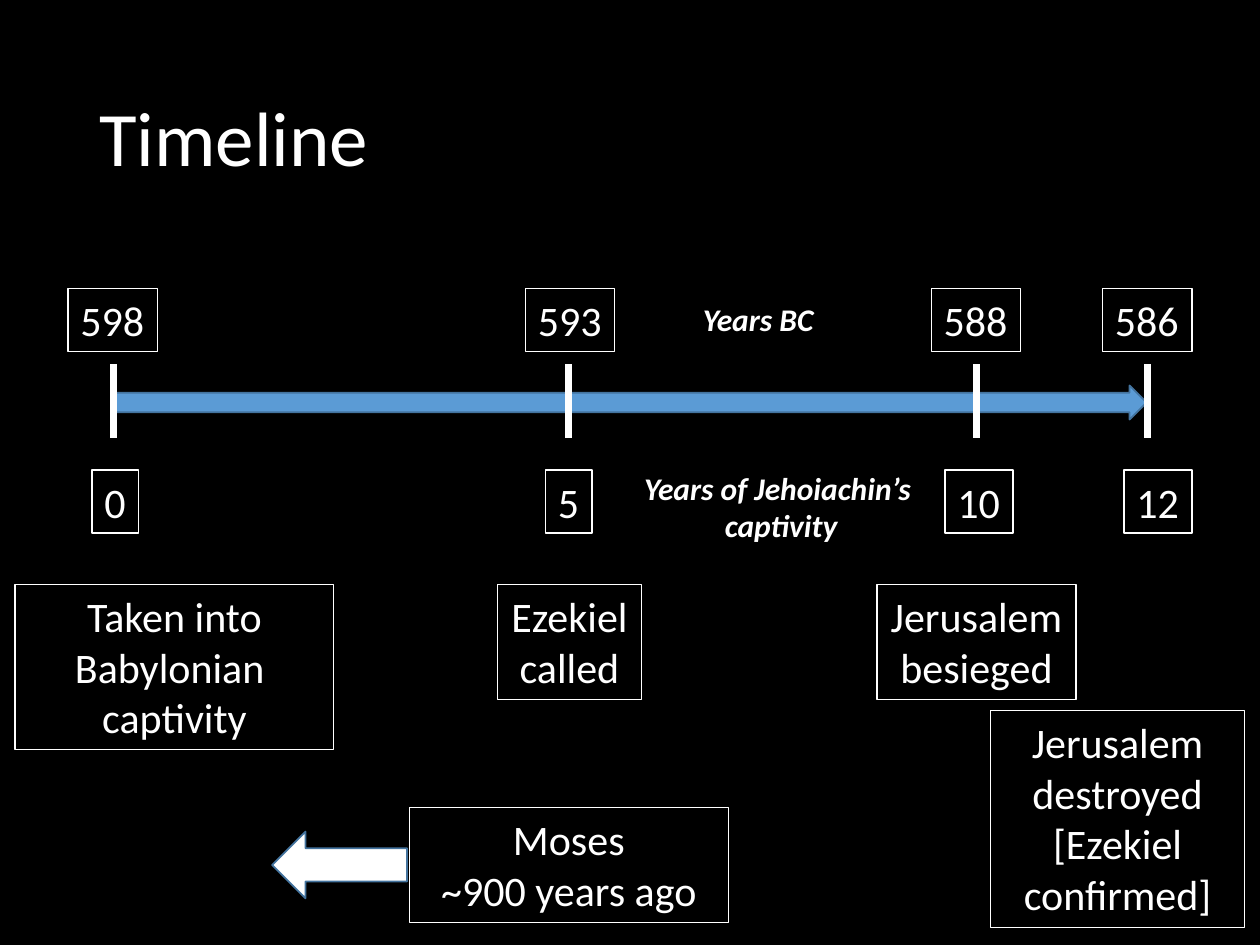
from pptx import Presentation
from pptx.dml.color import RGBColor
from pptx.enum.shapes import MSO_CONNECTOR, MSO_SHAPE
from pptx.enum.text import MSO_ANCHOR, MSO_AUTO_SIZE, PP_ALIGN
from pptx.oxml.ns import qn
from pptx.util import Inches, Pt

LEFT, CENTER = PP_ALIGN.LEFT, PP_ALIGN.CENTER
MIDDLE, TOP = MSO_ANCHOR.MIDDLE, MSO_ANCHOR.TOP
FIT = MSO_AUTO_SIZE.SHAPE_TO_FIT_TEXT
STRAIGHT = MSO_CONNECTOR.STRAIGHT
RIGHT_ARROW, LEFT_ARROW = MSO_SHAPE.RIGHT_ARROW, MSO_SHAPE.LEFT_ARROW

COLORS = {"back": "000000", "ink": "FFFFFF", "axis": "5B9BD5", "edge": "43739E"}
FONT = "Calibri"
COLS, ROWS = 100, 75
CELL = Inches(10) // COLS

YEAR_ROW, CAPTIVITY_ROW, EVENT_ROW = 22.9, 37.3, 46.4
TICK_TOP, TICK_BOTTOM = 28.9, 34.8
TICKS = [9, 45.1, 77.5, 91.1]
YEARS = [("598", 5.4), ("593", 41.7), ("588", 73.9), ("586", 87.5)]
CAPTIVITY = [("0", 7.3, 3.7), ("5", 43.3, 3.7), ("10", 75, 5.4), ("12", 89.2, 5.4)]
EVENTS = [
    ("Taken into Babylonian \ncaptivity", 1.2, EVENT_ROW, 25.3, 13.1, True),
    ("Ezekiel\ncalled", 39.5, EVENT_ROW, 11.4, 9.1, False),
    ("Jerusalem\nbesieged", 69.6, EVENT_ROW, 15.8, 9.1, False),
    ("Jerusalem\ndestroyed\n[Ezekiel confirmed]", 78.6, 56.4, 20.2, 17.2, True),
    ("Moses\n~900 years ago", 32.5, 64.1, 25.3, 9.1, True),
]


def color(name):
    """Return the named palette colour."""
    return RGBColor.from_string(COLORS[name])


def grid(*cells):
    """Turn grid counts into lengths."""
    return [int(n * CELL) for n in cells]


def add_text(slide, text, *box, size=24, align=LEFT, wrap=False, bold=False):
    """Add white text, bold text being italic too."""
    sp = slide.shapes.add_textbox(*grid(*box))
    tf = sp.text_frame
    tf.text = text
    tf.word_wrap = wrap
    tf.auto_size = FIT
    for p in tf.paragraphs:
        p.alignment = align
        for r in p.runs:
            r.font.name, r.font.size = FONT, Pt(size)
            r.font.bold = r.font.italic = bold
            r.font.color.rgb = color("ink")
    return sp


def add_framed(slide, text, *box, **style):
    """Add text inside a thin white frame."""
    sp = add_text(slide, text, *box, **style)
    sp.line.color.rgb = color("ink")
    sp.line.width = Pt(0.75)


def add_title(slide, text):
    """Add the heading, centred vertically in its band."""
    sp = add_text(slide, text, 6.9, 4, 86.2, 14.5, size=44, wrap=True)
    sp.text_frame.auto_size = MSO_AUTO_SIZE.NONE
    sp.text_frame.vertical_anchor = MIDDLE
    sp.text_frame.paragraphs[0].line_spacing = 0.9


def add_arrow(slide, preset, fill, *box, shaft=0.5):
    """Add a block arrow whose shaft takes a share of its height."""
    sp = slide.shapes.add_shape(preset, *grid(*box))
    sp.shadow.inherit = False
    sp.adjustments[0] = shaft
    sp.fill.solid()
    sp.fill.fore_color.rgb = color(fill)
    sp.line.color.rgb = color("edge")
    sp.line.width = Pt(1)


def add_tick(slide, col):
    """Add a thick upright mark across the axis."""
    line = slide.shapes.add_connector(STRAIGHT, *grid(col, TICK_TOP, col, TICK_BOTTOM))
    line.line.color.rgb = color("ink")
    line.line.width = Pt(4)
    props = line._element.spPr
    props.append(props.makeelement(qn("a:effectLst"), {}))


def main():
    """Build the timeline slide."""
    prs = Presentation()
    prs.slide_width, prs.slide_height = COLS * CELL, ROWS * CELL
    slide = prs.slides.add_slide(prs.slide_layouts[6])
    slide.background.fill.solid()
    slide.background.fill.fore_color.rgb = color("back")

    add_title(slide, "Timeline")
    add_arrow(slide, RIGHT_ARROW, "axis", 9, 30.6, 82, 2.7, shaft=0.58)
    for col in TICKS:
        add_tick(slide, col)
    for text, col in YEARS:
        add_framed(slide, text, col, YEAR_ROW, 7.1, 5)
    for text, col, width in CAPTIVITY:
        add_framed(slide, text, col, CAPTIVITY_ROW, width, 5)
    add_text(slide, "Years BC", 54.8, 23.3, 10.9, 4, size=18, bold=True)
    add_text(slide, "Years of Jehoiachin’s \ncaptivity", 50, 36.7, 24, 7.1,
             size=18, align=CENTER, bold=True)
    for text, *box, wrap in EVENTS:
        add_framed(slide, text, *box, align=CENTER, wrap=wrap)
    add_arrow(slide, LEFT_ARROW, "ink", 21.6, 66, 10.7, 5.3)
    prs.save("out.pptx")


if __name__ == "__main__":
    main()
